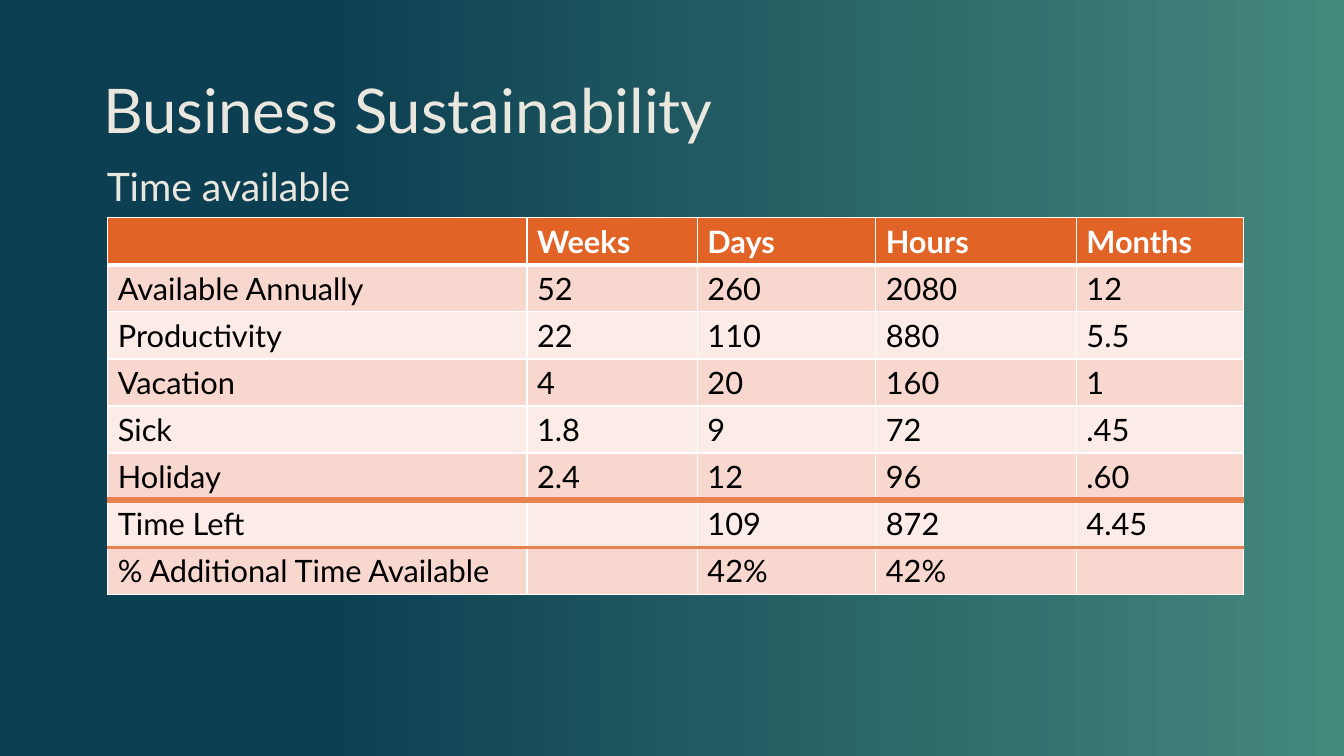
"""Build the Business Sustainability slide with its table of available time."""
from copy import deepcopy
from pptx import Presentation
from pptx.dml.color import RGBColor
from pptx.enum.text import MSO_ANCHOR as Anchor
from pptx.oxml.ns import qn
from pptx.oxml.xmlchemy import OxmlElement as Element
from pptx.util import Pt

FONT = "Lato"
WHITE = RGBColor(0xFF, 0xFF, 0xFF)
BLACK = RGBColor(0x00, 0x00, 0x00)
CREAM = RGBColor(0xEA, 0xE7, 0xDF)
ORANGE = RGBColor(0xE1, 0x63, 0x26)
RULE = RGBColor(0xE7, 0x82, 0x4F)
BANDS = [RGBColor(0xFC, 0xEC, 0xE8), RGBColor(0xF8, 0xD7, 0xCE)]
GRADIENT = [
    (0.24, RGBColor(0x0C, 0x3F, 0x52)),
    (0.76, RGBColor(0x32, 0x71, 0x6F)),
    (1.0, RGBColor(0x45, 0x89, 0x7D)),
]
ROWS = [
    ["", "Weeks", "Days", "Hours", "Months"],
    ["Available Annually", "52", "260", "2080", "12"],
    ["Productivity", "22", "110", "880", "5.5"],
    ["Vacation", "4", "20", "160", "1"],
    ["Sick", "1.8", "9", "72", ".45"],
    ["Holiday", "2.4", "12", "96", ".60"],
    ["Time Left", "", "109", "872", "4.45"],
    ["% Additional Time Available", "", "42%", "42%", ""],
]
COLUMN_WIDTHS = [299.5, 121.7, 127.4, 143.3, 119.5]
ROW_HEIGHT = 33.57
THIN = (WHITE, 1)
RULES_BELOW = {0: (WHITE, 3), 5: (RULE, 4.5), 6: (RULE, 2.25)}


def set_font(para, size, color, bold=False):
    para.font.name = FONT
    para.font.size = Pt(size)
    para.font.bold = bold
    para.font.color.rgb = color


def add_border(cell, side, color, width):
    line = Element(f"a:ln{side}")
    line.set("w", str(Pt(width)))
    fill = Element("a:solidFill")
    value = Element("a:srgbClr")
    value.set("val", str(color))
    fill.append(value)
    line.append(fill)
    cell._tc.get_or_add_tcPr().append(line)


deck = Presentation()
deck.slide_width, deck.slide_height = Pt(960), Pt(540)
slide = deck.slides.add_slide(deck.slide_layouts[6])

background = slide.background.fill
background.gradient()
background.gradient_angle = 0
stop_list = next(slide.element.iter(qn("a:gsLst")))
stop_list.append(deepcopy(stop_list[-1]))
for stop, (position, color) in zip(background.gradient_stops, GRADIENT):
    stop.position = position
    stop.color.rgb = color

table = slide.shapes.add_table(
    len(ROWS), len(COLUMN_WIDTHS), Pt(77), Pt(155.5),
    Pt(sum(COLUMN_WIDTHS)), Pt(ROW_HEIGHT * len(ROWS))).table
for column, width in zip(table.columns, COLUMN_WIDTHS):
    column.width = Pt(width)
for row_index, texts in enumerate(ROWS):
    table.rows[row_index].height = Pt(ROW_HEIGHT)
    header = row_index == 0
    above = RULES_BELOW.get(row_index - 1, THIN)
    below = RULES_BELOW.get(row_index, THIN)
    for column_index, text in enumerate(texts):
        cell = table.cell(row_index, column_index)
        for side, border in zip("LRTB", (THIN, THIN, above, below)):
            add_border(cell, side, *border)
        cell.fill.solid()
        cell.fill.fore_color.rgb = ORANGE if header else BANDS[row_index % 2]
        cell.text = text
        set_font(cell.text_frame.paragraphs[0], 22, WHITE if header else BLACK, header)

for text, left, top, size in [
    ("Business Sustainability", 66.6, 28.75, 44),
    ("Time available", 69.2, 82.8, 28),
]:
    box = slide.shapes.add_textbox(Pt(left), Pt(top), Pt(828), Pt(104.4))
    frame = box.text_frame
    frame.word_wrap = True
    frame.vertical_anchor = Anchor.MIDDLE
    para = frame.paragraphs[0]
    para.text = text
    para.line_spacing = 0.9
    set_font(para, size, CREAM)

deck.save("out.pptx")
